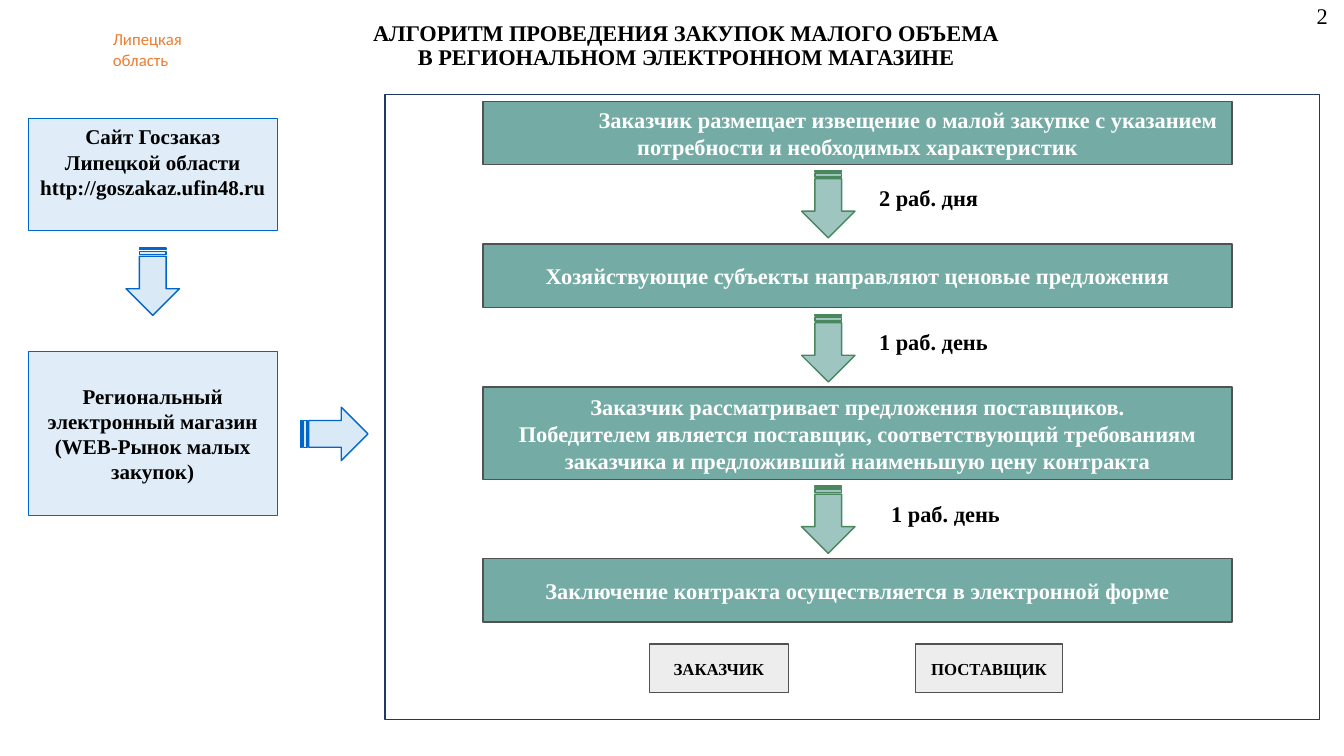
import pptx
import pptx.util
import pptx.dml.color
import pptx.enum.shapes
import pptx.enum.text
import pptx.oxml.ns

Inches = pptx.util.Inches
Pt = pptx.util.Pt
SHAPE = pptx.enum.shapes.MSO_SHAPE
ALIGN = pptx.enum.text.PP_ALIGN
ANCHOR = pptx.enum.text.MSO_ANCHOR

BLUE = {"fill": "E0EDF8", "line": "0066CC", "width": 0.75}
BLUE_ARROW = {"fill": "DAE9F6", "line": "0066CC"}
GREEN = {"fill": "75ABA5", "line": "525252"}
GREEN_ARROW = {"fill": "9FC5C0", "line": "4A865E"}
GREY = {"fill": "EDEDED", "line": "525252"}


def color(value):
    return pptx.dml.color.RGBColor.from_string(value)


def write(frame, lines, size, ink="000000", bold=True, font="Times New Roman",
          align=ALIGN.CENTER, anchor=ANCHOR.MIDDLE, wrap=True, spacing=1.0):
    """Put one paragraph per line into a text frame."""
    frame.word_wrap = wrap
    frame.vertical_anchor = anchor
    for index, line in enumerate(lines):
        paragraph = frame.paragraphs[0] if index == 0 else frame.add_paragraph()
        paragraph.text = line
        paragraph.alignment = align
        paragraph.line_spacing = spacing
        for run in paragraph.runs:
            look = {"size": Pt(size), "bold": bold, "name": font}
            for key, value in look.items():
                setattr(run.font, key, value)
            run.font.color.rgb = color(ink)


def add_text(slide, box, lines, size, **look):
    label = slide.shapes.add_textbox(*map(Inches, box))
    write(label.text_frame, lines, size, **look)


def add_block(slide, box, line, fill=None, width=1, kind=SHAPE.RECTANGLE):
    block = slide.shapes.add_shape(kind, *map(Inches, box))
    block.shadow.inherit = False
    if fill:
        block.fill.solid()
        block.fill.fore_color.rgb = color(fill)
    else:
        block.fill.background()
    block.line.color.rgb = color(line)
    block.line.width = Pt(width)
    return block


def add_arrow(slide, left, top, style, rotation=0):
    arrow = add_block(slide, (left, top, 0.67, 0.53),
                      kind=SHAPE.STRIPED_RIGHT_ARROW, **style)
    arrow.rotation = rotation


def add_header(slide, left, top, width):
    add_text(slide, (left + 0.74, top + 0.18, 0.91, 0.5), ["Липецкая", "область"], 12,
             ink="ED7D31", bold=False, font="Calibri", align=ALIGN.LEFT,
             anchor=ANCHOR.TOP, wrap=False)
    add_text(slide, (left, top, width, 0.8),
             ["АЛГОРИТМ ПРОВЕДЕНИЯ ЗАКУПОК МАЛОГО ОБЪЕМА\v"
              "В РЕГИОНАЛЬНОМ ЭЛЕКТРОННОМ МАГАЗИНЕ"], 16, spacing=0.9)
    add_text(slide, (left + 12.68, top - 0.09, 0.25, 0.37), ["2"], 16, bold=False,
             align=ALIGN.LEFT, anchor=ANCHOR.TOP, wrap=False)


def add_entry(slide, left, top, width):
    """Left column: the site, then the shop, then the way into the algorithm."""
    site = add_block(slide, (left, top, width, 1.11), **BLUE)
    write(site.text_frame, ["Сайт Госзаказ Липецкой области",
                            "http://goszakaz.ufin48.ru"], 15, anchor=ANCHOR.TOP)
    add_arrow(slide, left + width / 2 - 0.335, top + 1.35, BLUE_ARROW, 90)
    shop = add_block(slide, (left, top + 2.31, width, 1.62), **BLUE)
    write(shop.text_frame, ["Региональный электронный магазин",
                            "(WEB-Рынок малых закупок)"], 15)
    add_arrow(slide, left + width + 0.23, top + 2.86, BLUE_ARROW)


def add_algorithm(slide, left, top, width, height):
    """Framed column of steps with the term of each one, and the two signers."""
    add_block(slide, (left, top, width, height), line="203864")
    steps = [
        (0.07, 0.62, ["Заказчик размещает извещение о малой закупке с указанием "
                      "потребности и необходимых характеристик"]),
        (1.48, 0.63, ["Хозяйствующие субъекты направляют ценовые предложения"]),
        (2.9, 0.92, ["Заказчик рассматривает предложения поставщиков.",
                     "Победителем является поставщик, соответствующий требованиям "
                     "заказчика и предложивший наименьшую цену контракта"]),
        (4.6, 0.63, ["Заключение контракта осуществляется в электронной форме"]),
    ]
    for index, (offset, step_height, lines) in enumerate(steps):
        step = add_block(slide, (left + 0.97, top + offset, 7.43, step_height), **GREEN)
        write(step.text_frame, lines, 16, ink="FFFFFF")
        if index == 0:
            first_line = step.text_frame.paragraphs[0]._p.get_or_add_pPr()
            first_line.set("indent", str(Inches(1)))

    terms = [(0.82, 4.8, "2 раб. дня"), (2.25, 4.8, "1 раб. день"),
             (3.95, 4.92, "1 раб. день")]
    for offset, indent, term in terms:
        add_arrow(slide, left + 4.06, top + offset, GREEN_ARROW, 90)
        add_text(slide, (left + indent, top + offset + 0.02, 1.55, 0.37), [term], 16,
                 align=ALIGN.LEFT, anchor=ANCHOR.TOP)

    for offset, signer_width, signer in [(2.62, 1.38, "ЗАКАЗЧИК"),
                                         (5.26, 1.46, "ПОСТАВЩИК")]:
        block = add_block(slide, (left + offset, top + 5.45, signer_width, 0.48), **GREY)
        write(block.text_frame, [signer], 12)


def main():
    deck = pptx.Presentation()
    deck.slide_width, deck.slide_height = Inches(13.33), Inches(7.5)
    slide = deck.slides.add_slide(deck.slide_layouts[6])
    add_header(slide, 0.28, 0.06, 13.05)
    add_entry(slide, 0.28, 1.18, 2.47)
    add_algorithm(slide, 3.82, 0.94, 9.27, 6.2)
    deck.save("out.pptx")


if __name__ == "__main__":
    main()
